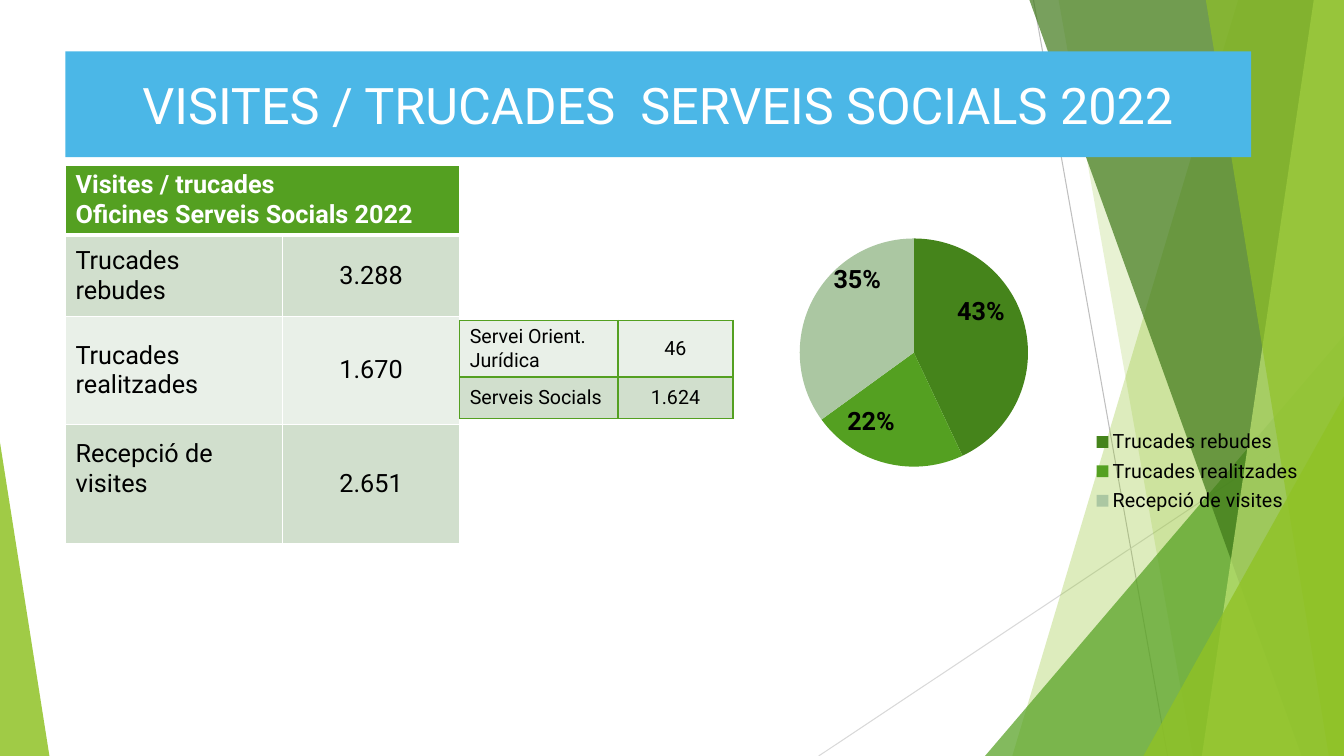
import pptx
import pptx.chart.data
import pptx.dml.color
import pptx.enum.chart
import pptx.enum.shapes
import pptx.enum.text
import pptx.oxml
import pptx.oxml.ns
import pptx.util

PX = 9144
WIDTH, HEIGHT = 1333, 750
FONT = "Roboto"
LIGHT, PALE, GREEN = "D1DFCD", "E9F0E8", "54A021"
SHAPES = pptx.enum.shapes.MSO_SHAPE
ALIGN = pptx.enum.text.PP_ALIGN
ANCHOR = pptx.enum.text.MSO_ANCHOR


def px(*lengths):
    return [length * PX for length in lengths]


def color(code):
    return pptx.dml.color.RGBColor.from_string(code)


def qn(tag):
    return pptx.oxml.ns.qn(tag)


def element(tag, **attributes):
    node = pptx.oxml.parse_xml(f"<{tag} {pptx.oxml.ns.nsdecls(tag[0])}/>")
    for name, value in attributes.items():
        node.set(name, str(value))
    return node


def paint(shape, code, opacity=100):
    shape.shadow.inherit = False
    shape.line.fill.background()
    shape.fill.solid()
    shape.fill.fore_color.rgb = color(code)
    if opacity < 100:
        fill = shape.element.spPr.find(qn("a:solidFill"))
        fill[0].append(element("a:alpha", val=opacity * 1000))


def style(font, size, code, bold=False):
    font.name = FONT
    font.size = pptx.util.Pt(size)
    font.bold = bold
    font.color.rgb = color(code)


def write(frame, text, size, code, align=ALIGN.LEFT, bold=False):
    for number, line in enumerate(text.split("\n")):
        para = frame.add_paragraph() if number else frame.paragraphs[0]
        para.alignment = align
        span = para.add_run()
        span.text = line
        style(span.font, size, code, bold)


def add_ray(page, start, end, code):
    ray = page.shapes.add_connector(pptx.enum.shapes.MSO_CONNECTOR.STRAIGHT, *px(*start, *end))
    ray.line.color.rgb = color(code)
    ray.line.width = pptx.util.Pt(0.75)
    ray.element.spPr.append(element("a:effectLst"))


def add_band(page, points, code, opacity):
    builder = page.shapes.build_freeform(*points[0], scale=PX)
    builder.add_line_segments(points[1:], close=True)
    paint(builder.convert_to_shape(), code, opacity)


def add_corner(page, box, apex, code, opacity):
    corner = page.shapes.add_shape(SHAPES.ISOSCELES_TRIANGLE, *px(*box))
    corner.adjustments[0] = apex
    paint(corner, code, opacity)


def add_backdrop(page):
    def band(top, bottom, code, opacity):
        points = [(top, 0), (WIDTH, 0), (WIDTH, HEIGHT), (bottom, HEIGHT)]
        add_band(page, points, code, opacity)

    def right_corner(left, top, code, opacity):
        add_corner(page, (left, top, WIDTH - left, HEIGHT - top), 1, code, opacity)

    add_ray(page, (1025, 0), (1158, HEIGHT), "BFBFBF")
    add_ray(page, (WIDTH, 403), (812, HEIGHT), "D9D9D9")
    band(1228, 1004, "90C226", 30)
    band(1050, 1183, "90C226", 20)
    right_corner(977, 333, GREEN, 72)
    band(1021, 1291, "3F7819", 70)
    band(1303, 1192, "C0E474", 70)
    band(1196, 1318, "90C226", 65)
    right_corner(1134, 393, "90C226", 80)
    add_corner(page, (0, 439, 49, HEIGHT - 439), 0, "90C226", 85)


def add_title(page, box):
    title = page.shapes.add_shape(SHAPES.RECTANGLE, *px(*box))
    paint(title, "4BB7E7")
    frame = title.text_frame
    frame.word_wrap = True
    frame.vertical_anchor = ANCHOR.MIDDLE
    write(frame, "VISITES / TRUCADES  SERVEIS SOCIALS 2022", 36, "FFFFFF", ALIGN.CENTER)


def set_layout(parent, place, **values):
    for old in parent.findall(qn("c:layout")):
        parent.remove(old)
    layout, manual = element("c:layout"), element("c:manualLayout")
    layout.append(manual)
    for name, value in values.items():
        manual.append(element(f"c:{name}", val=value))
    parent.insert(place, layout)


def add_pie(page, box):
    data = pptx.chart.data.CategoryChartData()
    data.categories = ["Trucades rebudes", "Trucades realitzades", "Recepció de visites"]
    data.add_series("Series 1", [43, 22, 35])
    kinds = pptx.enum.chart
    chart = page.shapes.add_chart(kinds.XL_CHART_TYPE.PIE, *px(*box), data).chart
    chart.has_title = False
    style(chart.font, 18, "000000")
    chart.has_legend = True
    legend = chart.legend
    legend.position = kinds.XL_LEGEND_POSITION.RIGHT
    legend.include_in_layout = False
    style(legend.font, 14, "000000")
    legend_node = chart.element.find(".//" + qn("c:legend"))
    set_layout(legend_node, 1, xMode="edge", yMode="edge", x=0.61, y=0.62, w=0.37, h=0.2)
    plot_node = chart.element.find(".//" + qn("c:plotArea"))
    set_layout(plot_node, 0, layoutTarget="inner", xMode="edge", yMode="edge",
               x=0.1, y=0.22, w=0.4, h=0.49)
    chart.plots[0].vary_by_categories = True
    slices = chart.plots[0].series[0].points
    for number, code in enumerate(["45841B", GREEN, "ABC7A2"]):
        part = slices[number]
        part.format.fill.solid()
        part.format.fill.fore_color.rgb = color(code)
        part.format.line.fill.background()
        style(part.data_label.font, 18, "000000", True)
        part.data_label.position = kinds.XL_LABEL_POSITION.CENTER
    shifts = [(0.02, -0.06), (-0.05, 0.03), (-0.01, -0.1)]
    for label, (x, y) in zip(chart.element.iter(qn("c:dLbl")), shifts):
        set_layout(label, 1, x=x, y=y)
        label.find(qn("c:showVal")).set("val", "0")
        label.find(qn("c:showPercent")).set("val", "1")


def set_borders(cell, code, bottom=1):
    properties = cell._tc.get_or_add_tcPr()
    for place, (side, points) in enumerate([("L", 1), ("R", 1), ("T", 1), ("B", bottom)]):
        line = element(f"a:ln{side}", w=points * 12700)
        fill = element("a:solidFill")
        fill.append(element("a:srgbClr", val=code))
        line.append(fill)
        properties.insert(place, line)


def add_grid(page, corner, widths, heights, rows, fills, border, size):
    box = (*corner, sum(widths), sum(heights))
    table = page.shapes.add_table(len(rows), len(widths), *px(*box)).table
    table.first_row = table.horz_banding = False
    for column, width in zip(table.columns, widths):
        column.width = width * PX
    for line, height in zip(table.rows, heights):
        line.height = height * PX
    for row, (texts, fill) in enumerate(zip(rows, fills)):
        header = len(texts) == 1
        if header:
            table.cell(row, 0).merge(table.cell(row, len(widths) - 1))
        for column in range(len(widths)):
            cell = table.cell(row, column)
            cell.fill.solid()
            cell.fill.fore_color.rgb = color(fill)
            set_borders(cell, border, 3 if header else 1)
            cell.vertical_anchor = ANCHOR.TOP if header else ANCHOR.MIDDLE
            if column < len(texts):
                write(cell.text_frame, texts[column], size, "FFFFFF" if header else "000000",
                      ALIGN.CENTER if column else ALIGN.LEFT, header)
    return table


def add_visits_table(page, corner):
    rows = [("Visites / trucades\nOficines Serveis Socials 2022",),
            ("Trucades rebudes", "3.288"),
            ("Trucades realitzades", "1.670"),
            ("Recepció de visites", "2.651")]
    table = add_grid(page, corner, [215, 176], [69, 81, 107, 118], rows,
                     [GREEN, LIGHT, PALE, LIGHT], "FFFFFF", 18)
    table.cell(3, 0).margin_bottom = 35 * PX


def add_calls_table(page, corner):
    rows = [("Servei Orient. Jurídica", "46"), ("Serveis Socials", "1.624")]
    add_grid(page, corner, [157, 114], [56, 41], rows, [PALE, LIGHT], GREEN, 14)


def main():
    deck = pptx.Presentation()
    deck.slide_width, deck.slide_height = px(WIDTH, HEIGHT)
    page = deck.slides.add_slide(deck.slide_layouts[6])
    add_backdrop(page)
    add_title(page, (65, 51, 1176, 105))
    add_pie(page, (736, 135, 568, 462))
    add_visits_table(page, (65, 164))
    add_calls_table(page, (456, 318))
    deck.save("out.pptx")


if __name__ == "__main__":
    main()
